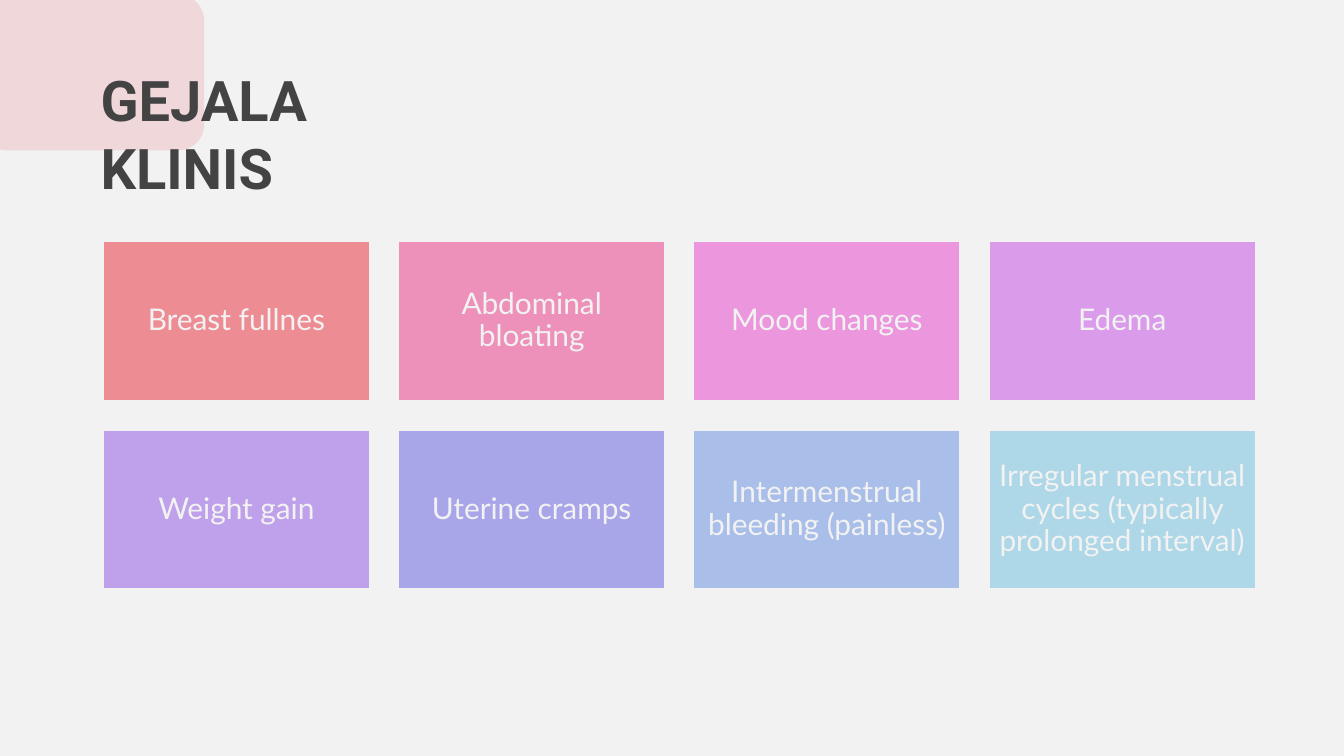
import pptx
import pptx.util
import pptx.dml.color
import pptx.enum.shapes
import pptx.enum.text
import pptx.oxml.ns
import lxml.etree

Inches = pptx.util.Inches
Pt = pptx.util.Pt
RGBColor = pptx.dml.color.RGBColor
Shape = pptx.enum.shapes.MSO_SHAPE
Align = pptx.enum.text.PP_ALIGN
Anchor = pptx.enum.text.MSO_ANCHOR

PALE = RGBColor(0xF2, 0xF2, 0xF2)
DARK = RGBColor(0x43, 0x43, 0x43)
CORAL = RGBColor(0xEE, 0x8C, 0x94)

TITLE = "GEJALA KLINIS"
CARDS = [
    ("Breast fullnes", CORAL),
    ("Abdominal bloating", RGBColor(0xED, 0x91, 0xBB)),
    ("Mood changes", RGBColor(0xEC, 0x96, 0xDD)),
    ("Edema", RGBColor(0xDA, 0x9B, 0xEB)),
    ("Weight gain", RGBColor(0xBF, 0xA0, 0xEA)),
    ("Uterine cramps", RGBColor(0xA8, 0xA5, 0xE9)),
    ("Intermenstrual bleeding (painless)", RGBColor(0xA9, 0xBE, 0xE9)),
    ("Irregular menstrual cycles (typically prolonged interval)",
     RGBColor(0xAE, 0xD7, 0xE8)),
]
COLS = 4
LEFT, RIGHT, TOP = 0.76, 9.35, 1.79
WIDE, HIGH = 2, 1.2
STEP = (RIGHT - LEFT - WIDE) / (COLS - 1)
DROP = 1.4


def add_block(slide, kind, box, color):
    block = slide.shapes.add_shape(kind, *map(Inches, box))
    block.shadow.inherit = False
    block.fill.solid()
    block.fill.fore_color.rgb = color
    block.line.fill.background()
    return block


def set_text(shape, text, font, size, color, inset, bold=False):
    frame = shape.text_frame
    frame.text = text
    frame.word_wrap = True
    frame.margin_left = frame.margin_right = Inches(inset)
    frame.margin_top = frame.margin_bottom = Inches(inset)
    para = frame.paragraphs[0]
    face = para.runs[0].font
    face.name, face.size, face.bold = font, Pt(size), bold
    face.color.rgb = color
    return frame, para


def add_card(slide, index, text, color):
    row, col = divmod(index, COLS)
    box = (LEFT + col * STEP, TOP + row * DROP, WIDE, HIGH)
    card = add_block(slide, Shape.RECTANGLE, box, color)
    card.line.color.rgb = PALE
    card.line.width = Pt(2)
    frame, para = set_text(card, text, "Lato", 16, PALE, 0.07)
    frame.vertical_anchor = Anchor.MIDDLE
    para.alignment = Align.CENTER
    para.line_spacing = 0.9


def main():
    deck = pptx.Presentation()
    deck.slide_width = Inches(10)
    deck.slide_height = deck.slide_width * 9 // 16
    slide = deck.slides.add_slide(deck.slide_layouts[6])
    slide.background.fill.solid()
    slide.background.fill.fore_color.rgb = PALE

    accent = add_block(slide, Shape.ROUNDED_RECTANGLE,
                       (-0.14, -0.04, 1.66, 1.16), CORAL)
    qn = pptx.oxml.ns.qn
    tint = accent.element.spPr.find(qn("a:solidFill"))[0]
    lxml.etree.SubElement(tint, qn("a:alpha"), val="25000")

    title = slide.shapes.add_textbox(*map(Inches, (0.65, 0.39, 2.69, 0.76)))
    set_text(title, TITLE, "Roboto", 30, DARK, 0.1, True)

    for index, (text, color) in enumerate(CARDS):
        add_card(slide, index, text, color)

    deck.save("out.pptx")


if __name__ == "__main__":
    main()
